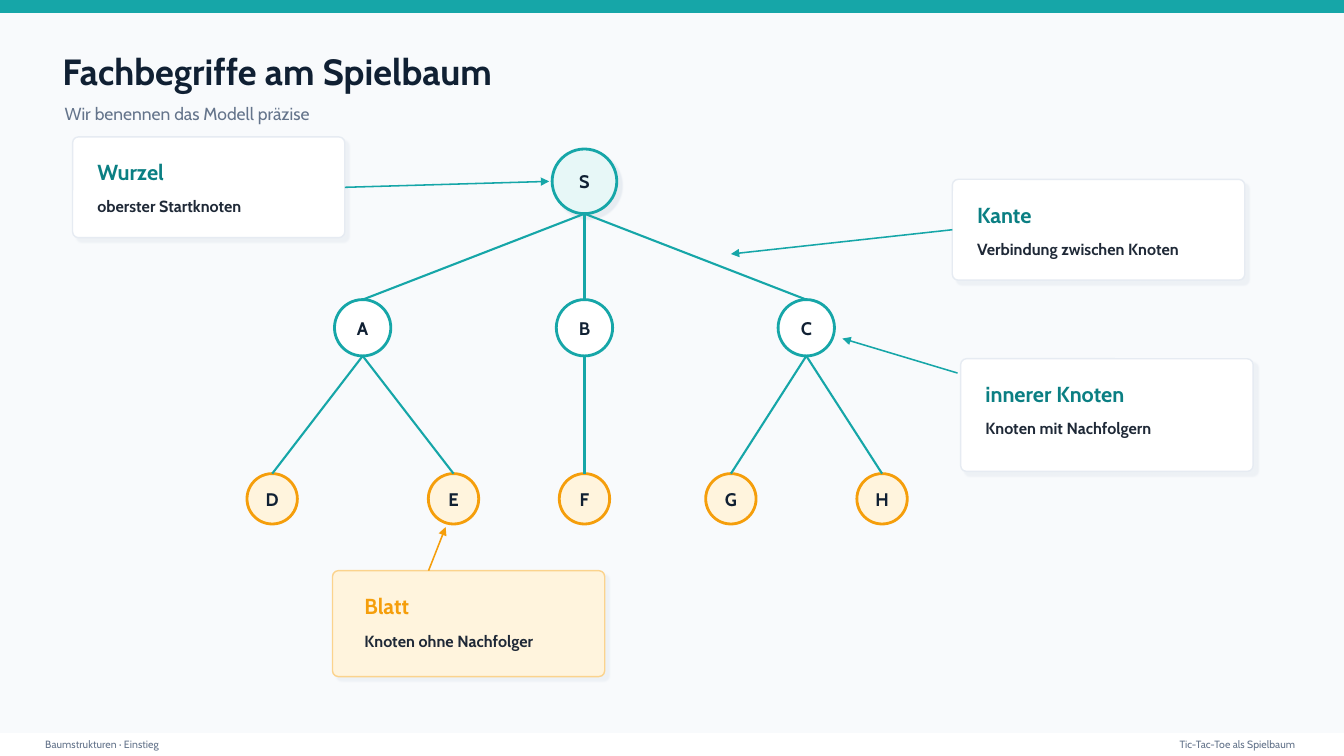
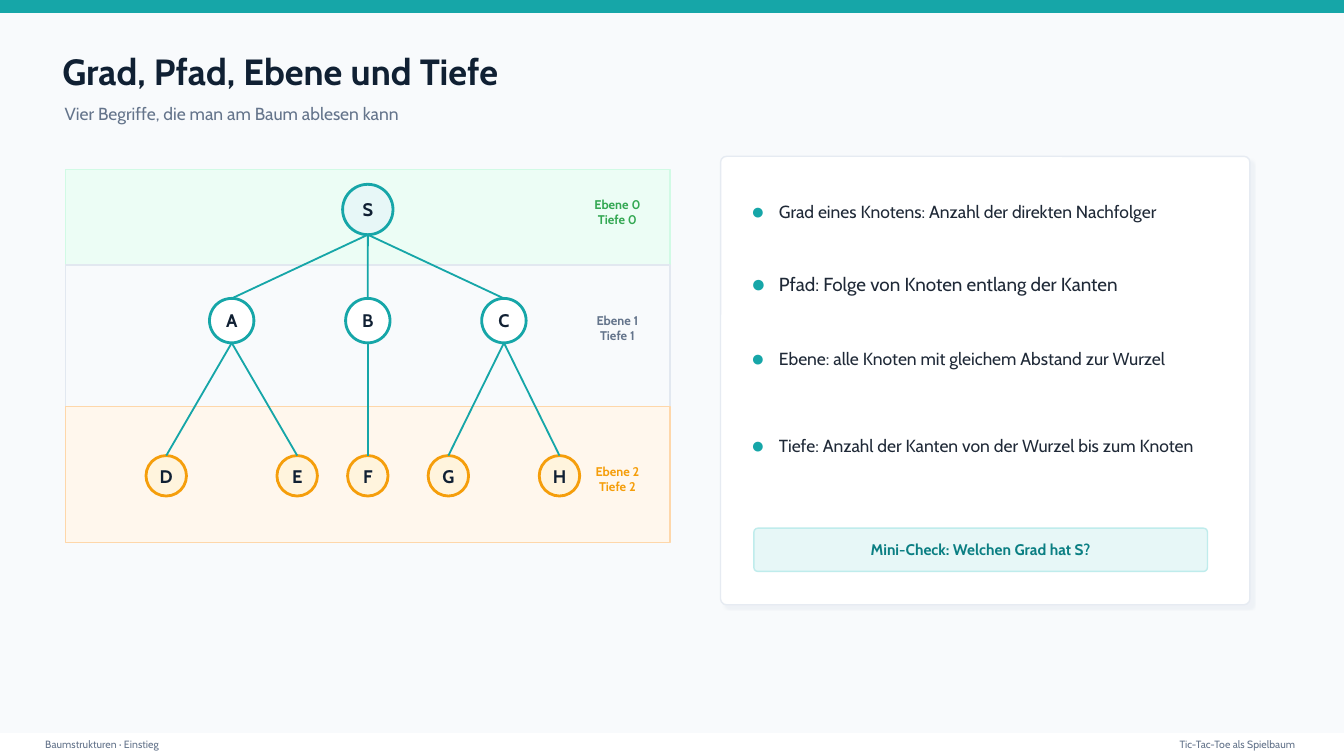
from lxml.etree import SubElement
from pptx import Presentation
from pptx.dml.color import RGBColor
from pptx.enum.shapes import MSO_CONNECTOR, MSO_SHAPE as Form
from pptx.enum.text import MSO_ANCHOR as Anchor, MSO_AUTO_SIZE, PP_ALIGN as Align
from pptx.oxml.ns import qn
from pptx.util import Cm, Pt

FONT = "Cabin"
WIDTH, HEIGHT = 33.87, 19.05
TEAL, DARK_TEAL, PALE_TEAL = "16A6A8", "0B7F83", "E7F7F7"
ORANGE, PALE_ORANGE = "F59E0B", "FFF4DD"
INK, BODY, MUTED = "102033", "1F2937", "64748B"
WHITE, PAPER, CARD_EDGE = "FFFFFF", "F8FAFC", "E6EBF2"
PARENTS = {"A": "S", "B": "S", "C": "S",
           "D": "A", "E": "A", "F": "B", "G": "C", "H": "C"}
LEVEL_COLORS = [(PALE_TEAL, TEAL), (WHITE, TEAL), (PALE_ORANGE, ORANGE)]
TITLE_ONLY, TITLE_AND_BODY = 5, 1


def rgb(value):
    return RGBColor.from_string(value)


def prepare(frame, anchor=Anchor.MIDDLE, left=0, top=0):
    frame.word_wrap = True
    frame.auto_size = MSO_AUTO_SIZE.NONE
    frame.vertical_anchor = anchor
    frame.margin_left, frame.margin_top = Cm(left), Cm(top)
    frame.margin_right = frame.margin_bottom = 0
    return frame


def write(frame, text, size=12.5, color=BODY, bold=False, align=Align.LEFT,
          before=0, line_height=None):
    """Fill the first paragraph of the frame, or append another one."""
    para = frame.add_paragraph() if frame.text else frame.paragraphs[0]
    para.alignment = align
    para.space_before = Pt(before)
    if line_height:
        para.line_spacing = Pt(line_height)
    span = para.add_run()
    span.text = text
    span.font.name = FONT
    span.font.size = Pt(size)
    span.font.bold = bold
    span.font.color.rgb = rgb(color)
    return para


def add_bullet(para, color, indent):
    props = para._p.get_or_add_pPr()
    props.set("marL", str(Cm(indent)))
    props.set("indent", str(-Cm(indent)))
    tint = SubElement(props, qn("a:buClr"))
    SubElement(tint, qn("a:srgbClr"), val=color)
    SubElement(props, qn("a:buSzPct"), val="130000")
    SubElement(props, qn("a:buFont"), typeface="Arial")
    SubElement(props, qn("a:buChar"), char="●")


def cast_shadow(shape, color, opacity):
    effects = shape._element.spPr.find(qn("a:effectLst"))
    shadow = SubElement(effects, qn("a:outerShdw"), blurRad=str(Pt(1)),
                        dist=str(Pt(4)), dir="2700000", algn="tl",
                        rotWithShape="0")
    tint = SubElement(shadow, qn("a:srgbClr"), val=color)
    SubElement(tint, qn("a:alpha"), val=str(opacity * 1000))


class TreeDeck:
    """The deck's style together with the slide being drawn."""

    def __init__(self):
        self.deck = Presentation()
        self.deck.slide_width, self.deck.slide_height = Cm(WIDTH), Cm(HEIGHT)
        self.page = None

    def new_page(self, layout, title, subtitle):
        self.page = self.deck.slides.add_slide(self.deck.slide_layouts[layout])
        background = self.page.background.fill
        background.solid()
        background.fore_color.rgb = rgb(PAPER)
        self.shape(Form.RECTANGLE, 0, 0, WIDTH, 0.3, TEAL, TEAL)
        self.shape(Form.RECTANGLE, 0, 18.49, WIDTH, 0.56, WHITE, WHITE)
        footer = dict(size=7.5, color=MUTED)
        write(self.text_box(1.14, 18.57, 10.67, 0.36),
              "Baumstrukturen · Einstieg", **footer)
        write(self.text_box(23.11, 18.57, 9.53, 0.36),
              "Tic-Tac-Toe als Spielbaum", align=Align.RIGHT, **footer)
        heading = self.page.shapes.title
        self.place(heading, 1.57, 1.14, 21.59, 1.27)
        write(prepare(heading.text_frame), title, size=26, color=INK, bold=True)
        write(self.text_box(1.63, 2.49, 22.86, 0.76), subtitle, color=MUTED)

    def place(self, shape, left, top, width, height):
        shape.left, shape.top = Cm(left), Cm(top)
        shape.width, shape.height = Cm(width), Cm(height)

    def text_box(self, left, top, width, height):
        box = self.page.shapes.add_textbox(Cm(left), Cm(top), Cm(width), Cm(height))
        return prepare(box.text_frame)

    def shape(self, form, left, top, width, height, fill, edge, edge_width=1):
        shape = self.page.shapes.add_shape(
            form, Cm(left), Cm(top), Cm(width), Cm(height))
        shape.shadow.inherit = False
        shape.fill.solid()
        shape.fill.fore_color.rgb = rgb(fill)
        shape.line.color.rgb = rgb(edge)
        shape.line.width = Pt(edge_width)
        prepare(shape.text_frame)
        return shape

    def panel(self, left, top, width, height, fill=WHITE, edge=CARD_EDGE,
              radius=0.15, shadow=True):
        panel = self.shape(Form.ROUNDED_RECTANGLE, left, top, width, height, fill, edge)
        panel.adjustments[0] = radius / min(width, height)
        if shadow:
            cast_shadow(panel, "CBD5E1", 22)
        return panel

    def line(self, start, end, color=TEAL, width=1.1, arrow=False):
        connector = self.page.shapes.add_connector(
            MSO_CONNECTOR.STRAIGHT, *(Cm(value) for value in (*start, *end)))
        connector.line.color.rgb = rgb(color)
        connector.line.width = Pt(width)
        props = connector._element.spPr
        if arrow:
            SubElement(props.find(qn("a:ln")), qn("a:tailEnd"), type="triangle")
        SubElement(props, qn("a:effectLst"))
        return connector

    def node(self, name, x, y, diameter, fill, edge):
        """Draw a labelled circle around the centre (x, y)."""
        node = self.shape(Form.OVAL, x - diameter / 2, y - diameter / 2,
                          diameter, diameter, fill, edge, 2)
        write(node.text_frame, name, size=13, color=INK, bold=True, align=Align.CENTER)
        return node

    def tree(self, levels, edge_width):
        """Each level is (y, diameter, x positions by node name)."""
        nodes, bottoms = {}, {}
        for (y, diameter, row), (fill, edge) in zip(levels, LEVEL_COLORS):
            for name, x in row.items():
                nodes[name] = self.node(name, x, y, diameter, fill, edge)
                bottoms[name] = (x, y + diameter / 2)
        for child, parent in PARENTS.items():
            edge = self.line(bottoms[parent], bottoms[child], width=edge_width)
            edge.end_connect(nodes[child], 0)
        return nodes

    def callout(self, area, term, meaning, start, end, side=None, color=DARK_TEAL,
                arrow_color=TEAL, inset=0.58, gap=8, **colors):
        """Explain a term on a card; its arrow may be joined to one side."""
        card = self.panel(*area, **colors)
        frame = prepare(card.text_frame, Anchor.TOP, inset, 0.52)
        write(frame, term, size=15.5, color=color, bold=True)
        write(frame, meaning, size=11.5, bold=True, before=gap)
        arrow = self.line(start, end, arrow_color, arrow=True)
        if side is not None:
            arrow.begin_connect(card, side)

    def level_band(self, top, height, label_top, number, fill, edge, color):
        self.shape(Form.RECTANGLE, 1.65, top, 15.24, height, fill, edge)
        label = self.text_box(14.61, label_top, 1.9, 1.02)
        for word in ("Ebene", "Tiefe"):
            write(label, f"{word} {number}", size=9, color=color, bold=True,
                  align=Align.CENTER)

    def bullet_list(self, area, items):
        """Fill the body placeholder; each item is (text, size, space before)."""
        body = self.page.placeholders[1]
        self.place(body, *area)
        # Bring the list in front of the panel it lies on.
        self.page.shapes._spTree.append(body._element)
        frame = prepare(body.text_frame, Anchor.TOP)
        for text, size, before in items:
            para = write(frame, text, size=size, before=before, line_height=16)
            add_bullet(para, TEAL, 0.7)


def draw_terms(show):
    show.new_page(TITLE_ONLY, "Fachbegriffe am Spielbaum",
                  "Wir benennen das Modell präzise")
    nodes = show.tree([
        (4.57, 1.63, {"S": 14.73}),
        (8.26, 1.42, {"A": 9.14, "B": 14.73, "C": 20.32}),
        (12.57, 1.27, {"D": 6.86, "E": 11.43, "F": 14.73, "G": 18.42, "H": 22.23}),
    ], edge_width=1.5)
    cast_shadow(nodes["S"], "B8C5D6", 25)
    show.callout((1.83, 3.45, 6.86, 2.54), "Wurzel", "oberster Startknoten",
                 (8.69, 4.72), (13.84, 4.57), side=3)
    show.callout((24, 4.52, 7.37, 2.54), "Kante", "Verbindung zwischen Knoten",
                 (24, 5.79), (18.42, 6.4), side=1)
    show.callout((8.38, 14.38, 6.86, 2.67), "Blatt", "Knoten ohne Nachfolger",
                 (10.8, 14.38), (11.23, 13.28), color=ORANGE, arrow_color=ORANGE,
                 inset=0.76, gap=9, fill=PALE_ORANGE, edge="FBD38D")
    show.callout((24.21, 9.04, 7.37, 2.84), "innerer Knoten", "Knoten mit Nachfolgern",
                 (24.13, 9.4), (21.23, 8.53))


def draw_measures(show):
    show.new_page(TITLE_AND_BODY, "Grad, Pfad, Ebene und Tiefe",
                  "Vier Begriffe, die man am Baum ablesen kann")
    bands = [(2.41, 4.83, "ECFDF5", "D1FAE5", "34A853"),
             (3.56, 7.75, PAPER, "E2E8F0", MUTED),
             (3.43, 11.56, "FFF7ED", "FED7AA", ORANGE)]
    top = 4.27
    for number, (height, label_top, *colors) in enumerate(bands):
        show.level_band(top, height, label_top, number, *colors)
        top += height
    show.tree([
        (5.28, 1.27, {"S": 9.27}),
        (8.08, 1.12, {"A": 5.84, "B": 9.27, "C": 12.7}),
        (11.99, 1.02, {"D": 4.19, "E": 7.49, "F": 9.27, "G": 11.3, "H": 14.1}),
    ], edge_width=1.3)
    show.panel(18.16, 3.94, 13.34, 11.3)
    show.bullet_list((18.93, 5.03, 12.13, 7), [
        ("Grad eines Knotens: Anzahl der direkten Nachfolger", 12.5, 0),
        ("Pfad: Folge von Knoten entlang der Kanten", 13.5, 36.5),
        ("Ebene: alle Knoten mit gleichem Abstand zur Wurzel", 12.5, 36.5),
        ("Tiefe: Anzahl der Kanten von der Wurzel bis zum Knoten", 12.5, 46.5),
    ])
    check = show.panel(19, 13.31, 11.43, 1.09, PALE_TEAL, "BFECEC", 0.1, shadow=False)
    write(check.text_frame, "Mini-Check: Welchen Grad hat S?", size=11,
          color=DARK_TEAL, bold=True, align=Align.CENTER)


def main():
    show = TreeDeck()
    draw_terms(show)
    draw_measures(show)
    show.deck.save("out.pptx")


if __name__ == "__main__":
    main()
